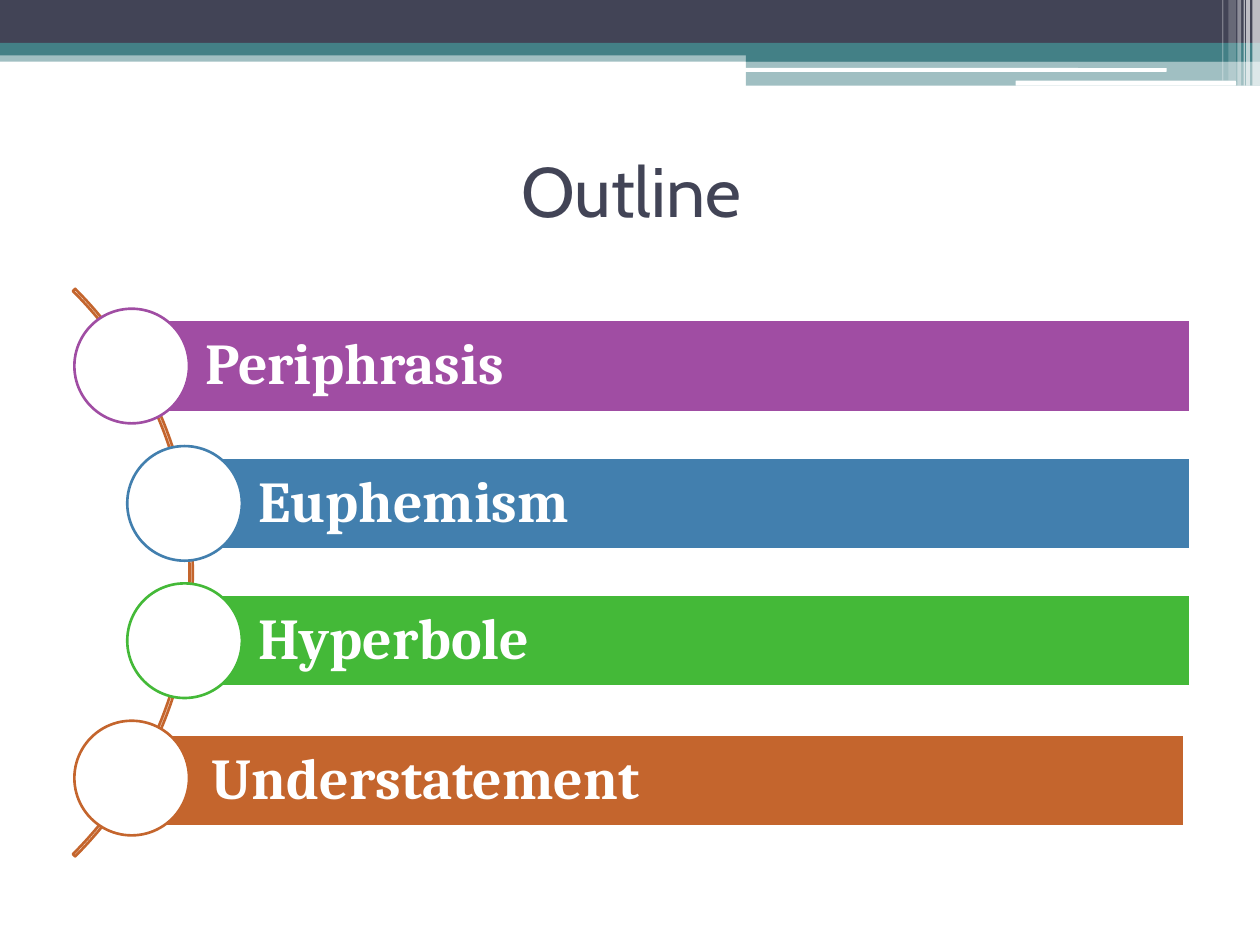
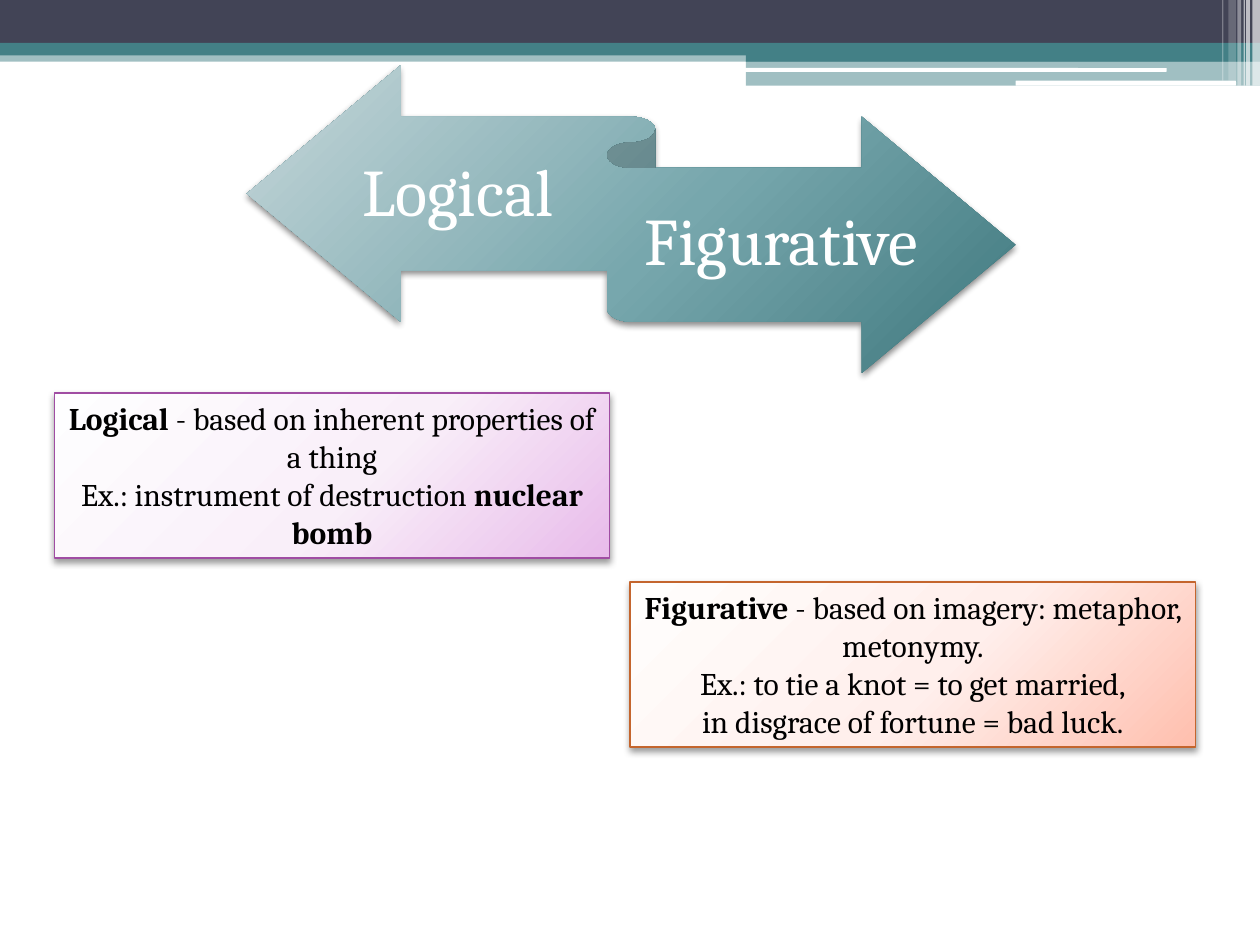
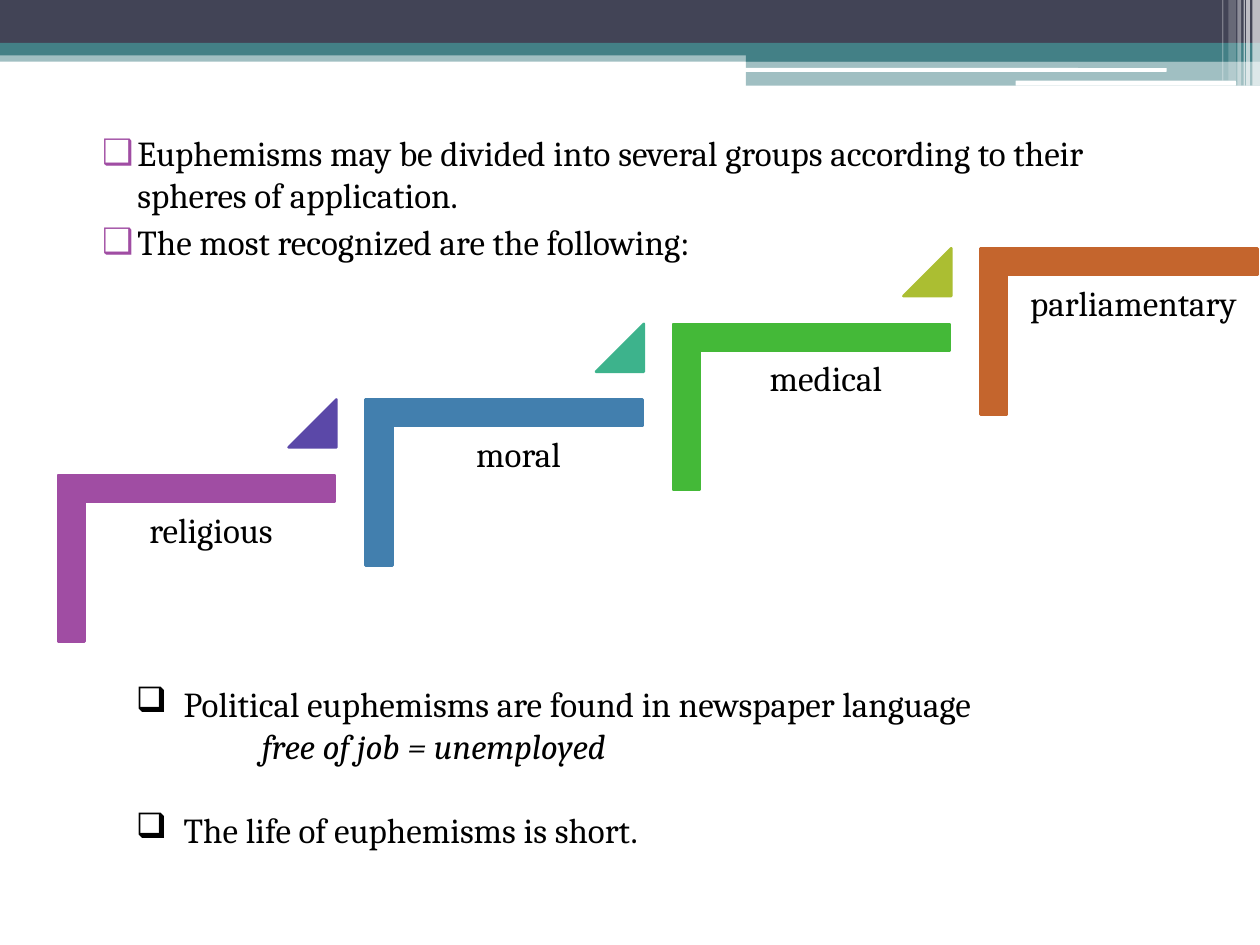
from lxml.etree import SubElement as Sub
from pptx import Presentation
from pptx.dml.color import RGBColor
from pptx.enum.shapes import MSO_SHAPE as Kind
from pptx.enum.text import MSO_ANCHOR as Anchor, MSO_AUTO_SIZE as Fit, PP_ALIGN as Align
from pptx.oxml.ns import qn
from pptx.util import Inches, Pt

NAVY, TEAL, WHITE, BLACK = "424456", "438086", "FFFFFF", "000000"
PLUM, BLUE, GREEN, RUST = "A04DA3", "427FAE", "44B938", "C4652D"
STEP_TINTS = ["5B48A8", "3DB38C", "ABBE32"]
HEAD_FONT, BODY_FONT = "Cabin", "Cambria"

BANDS = [
    (Kind.RECTANGLE, (0, 0.4, 10, 0.09), TEAL, 50),
    (Kind.RECTANGLE, (0, 0, 10, 0.34), NAVY, 100),
    (Kind.RECTANGLE, (0, 0.34, 10, 0.1), TEAL, 100),
    (Kind.RECTANGLE, (5.92, 0.39, 4.08, 0.1), TEAL, 100),
    (Kind.RECTANGLE, (5.92, 0.48, 4.08, 0.2), TEAL, 50),
    (Kind.ROUNDED_RECTANGLE, (5.91, 0.54, 3.35, 0.03), WHITE, 100),
    (Kind.ROUNDED_RECTANGLE, (8.06, 0.64, 1.75, 0.04), WHITE, 100),
]
STRIPES = [(9.94, 0.06, 0.68, 65), (9.89, 0.03, 0.68, 65), (9.87, 0.01, 0.68, 60),
           (9.82, 0.03, 0.68, 40), (9.75, 0.06, 0.64, 20), (9.7, 0.01, 0.64, 30)]


def paint(part, color):
    """Give a fill or a font a solid hex colour."""
    if hasattr(part, "solid"):
        part.solid()
        part.fore_color.rgb = RGBColor.from_string(color)
    else:
        part.color.rgb = RGBColor.from_string(color)


def draw(slide, kind, box, fill=None, line=None, width=1.5, alpha=100, adjust=()):
    """Add a preset shape with a plain fill and line."""
    shape = slide.shapes.add_shape(kind, *map(Inches, box))
    shape.shadow.inherit = False
    for n, value in enumerate(adjust):
        shape.adjustments[n] = value
    if fill:
        paint(shape.fill, fill)
    else:
        shape.fill.background()
    if alpha < 100:
        tone = shape.element.spPr.find(f".//{qn('a:srgbClr')}")
        Sub(tone, qn("a:alpha"), val=str(alpha * 1000))
    if line:
        paint(shape.line, line)
        shape.line.width = Pt(width)
    else:
        shape.line.fill.background()
    return shape


def blend(shape, colors):
    """Fill a shape with a round gradient of three colours."""
    blank = shape.element.spPr.find(qn("a:noFill"))
    grad = blank.makeelement(qn("a:gradFill"), {"rotWithShape": "1"})
    stops = Sub(grad, qn("a:gsLst"))
    for place, color in zip((0, 55, 100), colors):
        stop = Sub(stops, qn("a:gs"), pos=str(place * 1000))
        Sub(stop, qn("a:srgbClr"), val=color)
    route = Sub(grad, qn("a:path"), {"path": "circle"})
    Sub(route, qn("a:fillToRect"), l="-40000", t="-90000", r="140000", b="190000")
    blank.getparent().replace(blank, grad)


def shade(shape, alpha):
    """Cast a soft shadow straight down."""
    effects = shape.element.spPr.find(qn("a:effectLst"))
    cast = Sub(effects, qn("a:outerShdw"), blurRad=str(Pt(4)), dist=str(Pt(2)),
               dir="5400000", algn="ctr", rotWithShape="0")
    tone = Sub(cast, qn("a:srgbClr"), val=BLACK)
    Sub(tone, qn("a:alpha"), val=str(alpha * 1000))


def indent(para, left, hang=0, mark=None, color=None):
    """Indent a paragraph and give it a bullet if one is named."""
    props = para._p.get_or_add_pPr()
    props.set("marL", str(Inches(left)))
    props.set("indent", str(Inches(-hang)))
    if color:
        Sub(Sub(props, qn("a:buClr")), qn("a:srgbClr"), val=color)
    if mark:
        Sub(props, qn("a:buChar"), char=mark)


def write(frame, lines, size=20, color=BLACK, font=BODY_FONT, bold=False, align=Align.LEFT,
          anchor=Anchor.TOP, inset=(0.1, 0.05, 0.1, 0.05), spacing=None):
    """Write lines, each a string or a list of (text, bold) runs; return the paragraphs."""
    frame.word_wrap = True
    frame.auto_size = Fit.NONE
    frame.vertical_anchor = anchor
    (frame.margin_left, frame.margin_top,
     frame.margin_right, frame.margin_bottom) = map(Inches, inset)
    for n, line in enumerate(lines):
        para = frame.add_paragraph() if n else frame.paragraphs[0]
        para.alignment = align
        para.space_before = Pt(0)
        if spacing:
            para.line_spacing = spacing
        for text, heavy in [(line, bold)] if isinstance(line, str) else line:
            run = para.add_run()
            run.text = text
            run.font.size, run.font.name, run.font.bold = Pt(size), font, heavy
            paint(run.font, color)
    return frame.paragraphs


def label(slide, box, lines, **form):
    """Add a text box and return its paragraphs."""
    return write(slide.shapes.add_textbox(*map(Inches, box)).text_frame, lines, **form)


def place(shape, box):
    """Move a placeholder to a box."""
    shape.left, shape.top, shape.width, shape.height = map(Inches, box)


def brand(deck, slide):
    """Draw the top bands and hand them to the master."""
    parts = [draw(slide, kind, box, fill, alpha=alpha) for kind, box, fill, alpha in BANDS]
    parts += [draw(slide, Kind.RECTANGLE, (left, 0, width, height), WHITE, alpha=alpha)
              for left, width, height, alpha in STRIPES]
    tree = deck.slide_master.shapes.element
    for n, part in enumerate(parts):
        part.element.nvSpPr.cNvPr.set("id", str(100 + n))
        tree.insert(2 + n, part.element)


def entry(slide, left, top, name, color, nudge=(0, 0), inset=0.58):
    """Draw a bar with its name and a ring at its left end."""
    bar = (left + 0.46 + nudge[0], top + 0.09 + nudge[1], 8.4 - (left - 0.59), 0.73)
    shape = draw(slide, Kind.RECTANGLE, bar, color, WHITE)
    write(shape.text_frame, [name], size=33, color=WHITE, bold=True, spacing=0.9,
          anchor=Anchor.MIDDLE, inset=(inset, 0.09, 0.09, 0.09))
    draw(slide, Kind.OVAL, (left, top, 0.91, 0.91), WHITE, color)


def outline(slide):
    """Build the outline of four topics along an arc."""
    place(slide.shapes.title, (0.51, 0.92, 9, 1.17))
    write(slide.shapes.title.text_frame, ["Outline"], size=40, color=NAVY, font=HEAD_FONT,
          align=Align.CENTER, anchor=Anchor.MIDDLE)
    draw(slide, Kind.BLOCK_ARC, (-4.84, 1.36, 6.37, 6.37), line=RUST, adjust=(189, 27, 0.004))
    topics = [("Periphrasis", PLUM, 0.59, {}), ("Euphemism", BLUE, 1.01, {}),
              ("Hyperbole", GREEN, 1.01, {}),
              ("Understatement", RUST, 0.59, {"nudge": (-0.05, 0.02), "inset": 0.68})]
    for n, (name, color, left, extra) in enumerate(topics):
        entry(slide, left, 2.45 + 1.09 * n, name, color, **extra)


def ribbon(slide, left, top):
    """Draw the two-way ribbon with a name on each half."""
    shape = draw(slide, Kind.LEFT_RIGHT_RIBBON, (left, top, 6.1, 2.44))
    blend(shape, ["C7D7DA", "77A7AD", "3E777D"])
    shade(shape, 45)
    for name, x, y, width in [("Logical", 0.67, 0.43, 2.01), ("Figurative", 3.05, 0.82, 2.38)]:
        label(slide, (left + x, top + y, width, 1.2), [name], size=38, color=WHITE, spacing=0.9,
              align=Align.CENTER, anchor=Anchor.MIDDLE, inset=(0, 0.15, 0, 0.16))


def card(slide, box, lines, line, colors):
    """Draw a shaded card with centred text."""
    shape = draw(slide, Kind.RECTANGLE, box, line=line, width=0.75)
    blend(shape, colors)
    shade(shape, 40)
    write(shape.text_frame, lines, size=18, align=Align.CENTER)


def types(slide):
    """Build the slide of the two types."""
    ribbon(slide, 1.96, 0.52)
    card(slide, (0.43, 3.12, 4.41, 1.31), [
        [("Logical", True), (" - based on inherent properties of a thing", False)],
        [("Ex.: instrument of destruction ", False), ("nuclear bomb", True)],
    ], PLUM, ["FEFEFF", "F9EFF9", "E8BBEA"])
    card(slide, (5, 4.62, 4.49, 1.31), [
        [("Figurative ", True), ("- based on imagery: metaphor, metonymy.", False)],
        "Ex.: to tie a knot = to get married,",
        "in disgrace of fortune = bad luck.",
    ], RUST, ["FFFEFD", "FFEFEC", "FFBFAE"])


def stair(slide, left, top, name, color, tint=None):
    """Draw one step with its name and a small triangle above."""
    wide, high = 2.2, 1.32
    gap = (wide - high) / 2
    corner = draw(slide, Kind.CORNER, (left + gap, top - gap, high, wide), color, color,
                  adjust=(0.161, 0.161))
    corner.rotation = 90
    label(slide, (left + 0.22, top + 0.22, 1.99, 1.74), [name], align=Align.CENTER,
          spacing=0.9, inset=(0.08,) * 4)
    if tint:
        draw(slide, Kind.ISOSCELES_TRIANGLE, (left + 1.83, top - 0.6, 0.38, 0.38), tint, tint,
             adjust=(1,))


def groups(slide):
    """Build the slide of euphemism groups."""
    title = slide.shapes.title.element
    title.getparent().remove(title)
    body = slide.placeholders[1]
    place(body, (0.59, 0.99, 9, 4.73))
    points = write(body.text_frame, [
        "Euphemisms may be divided into several groups according to their spheres of application.",
        "The most recognized are the following:"])
    points[1].space_before = Pt(3)
    for para in points:
        indent(para, 0.4, 0.28, "❑", PLUM)

    names = ["religious", "moral", "medical", "parliamentary"]
    colors = [PLUM, BLUE, GREEN, RUST]
    for n, (name, color, tint) in enumerate(zip(names, colors, STEP_TINTS + [None])):
        stair(slide, 0.46 + 2.44 * n, 3.77 - 0.6 * n, name, color, tint)

    press, sample, life = label(slide, (0.98, 5.37, 8.58, 1.45), [
        "Political euphemisms are found in newspaper language",
        "free of job = unemployed",
        "The life of euphemisms is short."])
    for para in (press, life):
        indent(para, 0.38, 0.38, "❑")
    indent(sample, 1)
    sample.runs[0].font.italic = True
    life.space_before = Pt(24)


def main():
    """Build and save the deck."""
    deck = Presentation()
    deck.slide_width, deck.slide_height = Inches(10), Inches(7.5)
    for n, (layout, build) in enumerate([(5, outline), (6, types), (1, groups)]):
        slide = deck.slides.add_slide(deck.slide_layouts[layout])
        if n == 0:
            brand(deck, slide)
        build(slide)
    deck.save("out.pptx")


if __name__ == "__main__":
    main()
